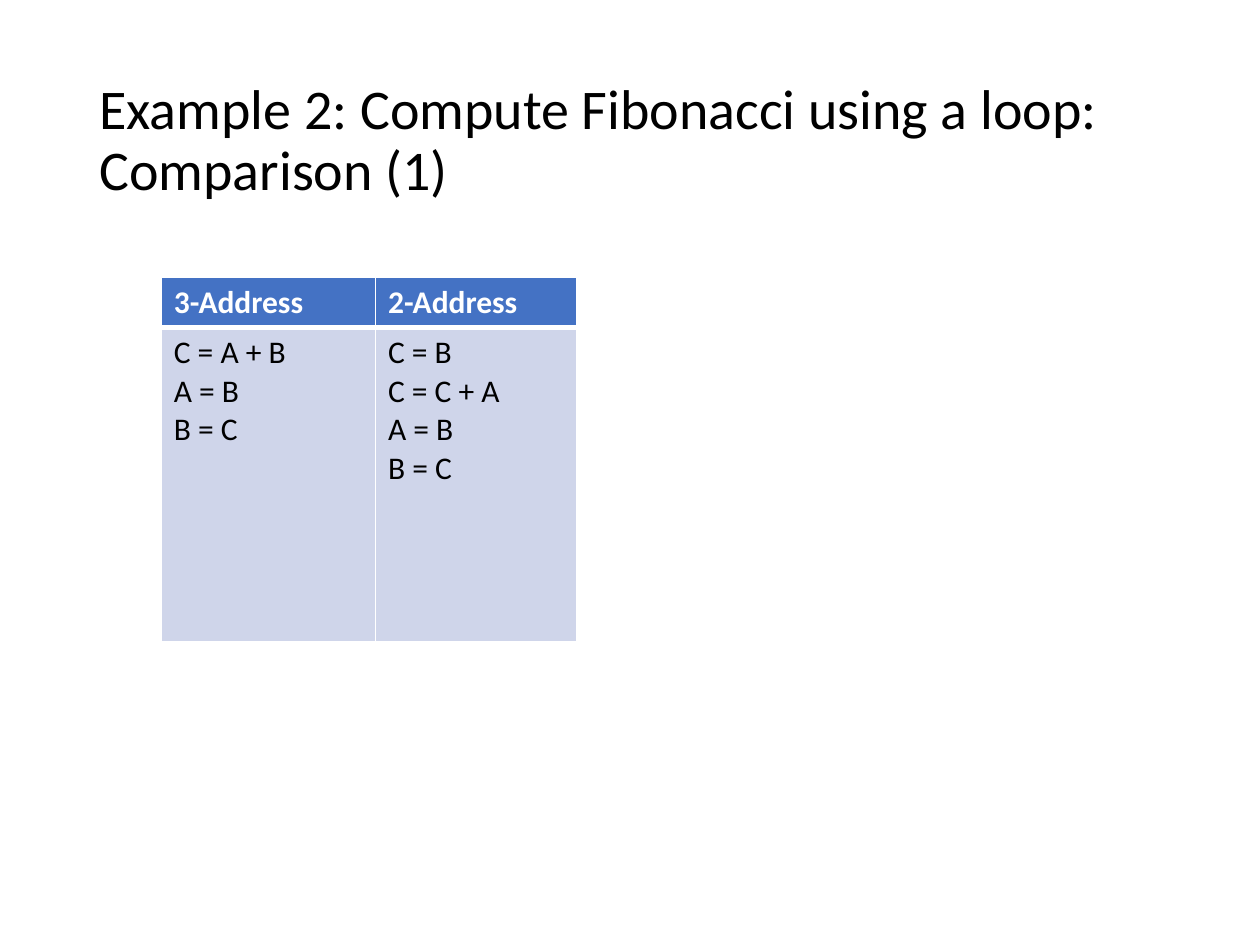
from dataclasses import dataclass

from lxml.etree import SubElement
from pptx import Presentation
from pptx.dml.color import RGBColor as Rgb
from pptx.enum.text import MSO_ANCHOR as Anchor
from pptx.oxml.ns import qn
from pptx.util import Pt

TITLE = "Example 2: Compute Fibonacci using a loop: Comparison (1)"
PROGRAMS = {
    "3-Address": ["C = A + B", "A = B", "B = C"],
    "2-Address": ["C = B", "C = C + A", "A = B", "B = C"],
}
COLUMN_WIDTHS = (122.4, 115.2)
ROW_HEIGHTS = (28.8, 179.28)
TABLE_LEFT, TABLE_TOP = 92.16, 158.4
TITLE_BOX = (49.68, 28.8, 620.64, 104.4)


@dataclass(frozen=True)
class Theme:
    font: str = "Calibri"
    title_size: float = 32
    cell_size: float = 18
    text: str = "000000"
    header_text: str = "FFFFFF"
    header_fill: str = "4472C4"
    body_fill: str = "CFD5EA"
    border: str = "FFFFFF"
    thin: float = 1
    thick: float = 3


THEME = Theme()


def add_text(para, text, size, color, bold=False):
    span = para.add_run()
    span.text = text
    span.font.name = THEME.font
    span.font.size = Pt(size)
    span.font.bold = bold
    span.font.color.rgb = Rgb.from_string(color)


def set_borders(cell, bottom, top):
    """Draw the four cell edges; call before filling, as lines come first in tcPr."""
    properties = cell._tc.get_or_add_tcPr()
    widths = {"lnL": THEME.thin, "lnR": THEME.thin, "lnT": top, "lnB": bottom}
    for edge, width in widths.items():
        line = SubElement(properties, qn(f"a:{edge}"), w=str(Pt(width)))
        fill = SubElement(line, qn("a:solidFill"))
        SubElement(fill, qn("a:srgbClr"), val=THEME.border)


def fill_cell(cell, lines, header):
    edge = THEME.thick  # the rule between header and body
    set_borders(cell, bottom=edge if header else THEME.thin,
                top=THEME.thin if header else edge)
    cell.fill.solid()
    cell.fill.fore_color.rgb = Rgb.from_string(
        THEME.header_fill if header else THEME.body_fill)
    color = THEME.header_text if header else THEME.text
    frame = cell.text_frame
    for index, line in enumerate(lines):
        para = frame.add_paragraph() if index else frame.paragraphs[0]
        add_text(para, line, THEME.cell_size, color, bold=header)


def add_title(page):
    box = page.shapes.add_textbox(*map(Pt, TITLE_BOX))
    frame = box.text_frame
    frame.word_wrap = True
    frame.vertical_anchor = Anchor.MIDDLE
    para = frame.paragraphs[0]
    para.line_spacing = 0.9
    add_text(para, TITLE, THEME.title_size, THEME.text)


def add_comparison(page):
    table = page.shapes.add_table(
        len(ROW_HEIGHTS), len(PROGRAMS), Pt(TABLE_LEFT), Pt(TABLE_TOP),
        Pt(sum(COLUMN_WIDTHS)), Pt(sum(ROW_HEIGHTS))).table
    for row, height in zip(table.rows, ROW_HEIGHTS):
        row.height = Pt(height)
    for index, (name, steps) in enumerate(PROGRAMS.items()):
        table.columns[index].width = Pt(COLUMN_WIDTHS[index])
        fill_cell(table.cell(0, index), [name], header=True)
        fill_cell(table.cell(1, index), steps, header=False)


def main():
    deck = Presentation()
    deck.slide_width, deck.slide_height = Pt(720), Pt(540)
    page = deck.slides.add_slide(deck.slide_layouts[6])
    add_title(page)
    add_comparison(page)
    deck.save("out.pptx")


if __name__ == "__main__":
    main()
